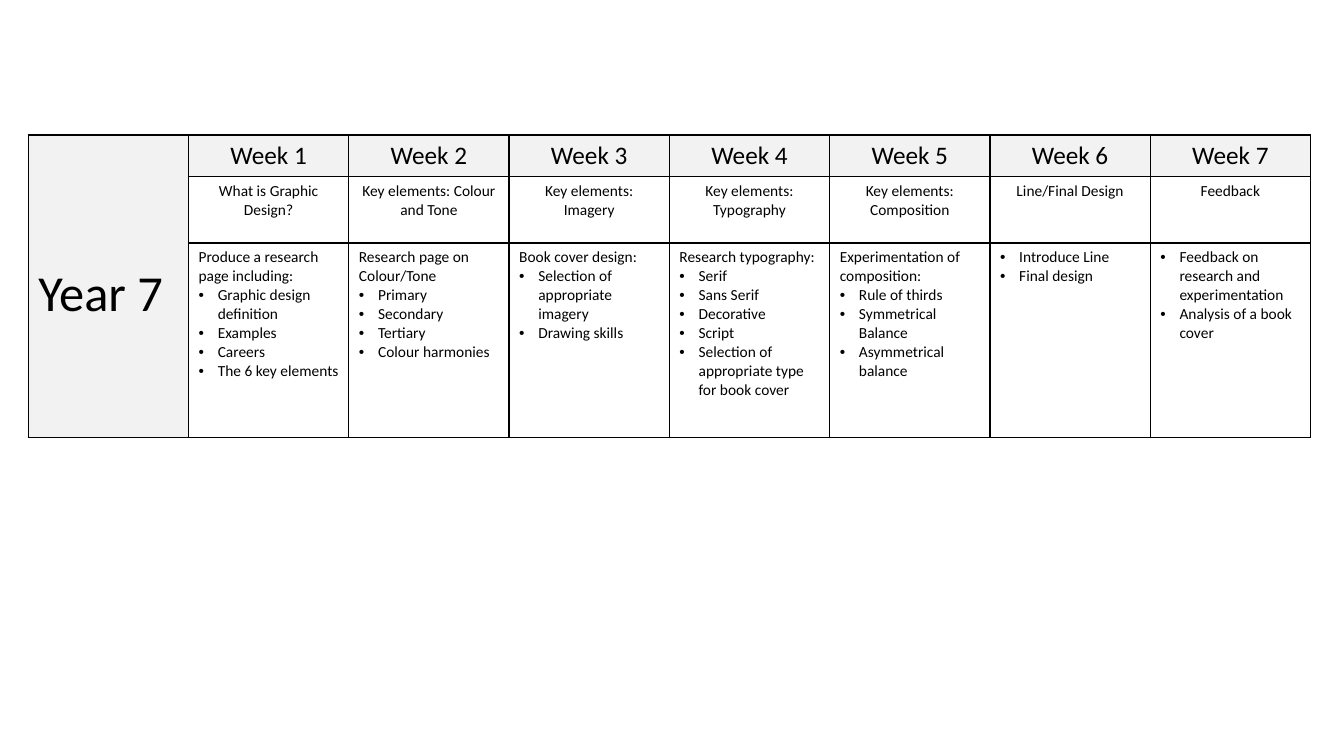
from lxml import etree
from pptx import Presentation
from pptx.dml.color import RGBColor
from pptx.enum.text import MSO_ANCHOR, PP_ALIGN
from pptx.oxml.ns import qn
from pptx.util import Inches, Pt

CENTER, LEFT = PP_ALIGN.CENTER, PP_ALIGN.LEFT
MIDDLE = MSO_ANCHOR.MIDDLE
COLORS = {"text": "000000", "border": "000000", "heading": "F2F2F2", "body": "FFFFFF"}
FONT = "Calibri"
ROW_HEIGHTS = [0.41, 0.66, 1.93]
WEEKS = [
    ("What is Graphic Design?", "Produce a research page including:",
     ["Graphic design definition", "Examples", "Careers", "The 6 key elements"]),
    ("Key elements: Colour and Tone", "Research page on Colour/Tone",
     ["Primary", "Secondary", "Tertiary", "Colour harmonies"]),
    ("Key elements: Imagery", "Book cover design:",
     ["Selection of appropriate imagery", "Drawing skills"]),
    ("Key elements: Typography", "Research typography:",
     ["Serif", "Sans Serif", "Decorative", "Script",
      "Selection of appropriate type for book cover"]),
    ("Key elements: Composition", "Experimentation of composition:",
     ["Rule of thirds", "Symmetrical Balance", "Asymmetrical balance"]),
    ("Line/Final Design", None, ["Introduce Line", "Final design"]),
    ("Feedback", None,
     ["Feedback on research and experimentation", "Analysis of a book cover"]),
]


def write(p, text, size=11, align=LEFT, bullet=False):
    """Put formatted text in a paragraph, with an optional hanging bullet."""
    p.alignment = align
    r = p.add_run()
    r.text = text
    r.font.name, r.font.size = FONT, Pt(size)
    r.font.color.rgb = RGBColor.from_string(COLORS["text"])
    if bullet:
        pPr = p._p.get_or_add_pPr()
        pPr.set("marL", str(Inches(0.19)))
        pPr.set("indent", str(-Inches(0.19)))
        etree.SubElement(pPr, qn("a:buFont")).set("typeface", "Arial")
        etree.SubElement(pPr, qn("a:buChar")).set("char", "•")


def style_cell(cell, color):
    """Give a cell thin borders and a plain fill."""
    tcPr = cell._tc.get_or_add_tcPr()
    for side in ("lnL", "lnR", "lnT", "lnB"):
        ln = etree.SubElement(tcPr, qn(f"a:{side}"), w=str(Pt(1)))
        fill = etree.SubElement(ln, qn("a:solidFill"))
        etree.SubElement(fill, qn("a:srgbClr")).set("val", COLORS["border"])
    cell.fill.solid()
    cell.fill.fore_color.rgb = RGBColor.from_string(color)


def fill_tasks(cell, intro, tasks):
    """Write an optional opening line followed by bulleted tasks."""
    lines = ([(intro, False)] if intro else []) + [(task, True) for task in tasks]
    tf = cell.text_frame
    for i, (text, bullet) in enumerate(lines):
        p = tf.add_paragraph() if i else tf.paragraphs[0]
        write(p, text, bullet=bullet)


def add_plan(s, left, top, width, year, weeks):
    """Draw the weekly plan of one year as a table."""
    count = len(weeks) + 1
    table = s.shapes.add_table(len(ROW_HEIGHTS), count, Inches(left), Inches(top),
                               Inches(width), Inches(sum(ROW_HEIGHTS))).table
    table.first_row = table.horz_banding = False
    for column in table.columns:
        column.width = Inches(width / count)
    for i, height in enumerate(ROW_HEIGHTS):
        table.rows[i].height = Inches(height)
        for j in range(count):
            heading = i == 0 or j == 0
            style_cell(table.cell(i, j), COLORS["heading" if heading else "body"])

    label = table.cell(0, 0)
    label.merge(table.cell(len(ROW_HEIGHTS) - 1, 0))
    label.vertical_anchor = MIDDLE
    label.margin_top = Inches(0.21)
    write(label.text_frame.paragraphs[0], year, size=36)

    for j, (topic, intro, tasks) in enumerate(weeks, 1):
        write(table.cell(0, j).text_frame.paragraphs[0], f"Week {j}", size=18, align=CENTER)
        write(table.cell(1, j).text_frame.paragraphs[0], topic, align=CENTER)
        fill_tasks(table.cell(2, j), intro, tasks)


def main():
    """Build and save the slide."""
    prs = Presentation()
    prs.slide_width, prs.slide_height = Inches(13.33), Inches(7.5)
    s = prs.slides.add_slide(prs.slide_layouts[6])
    add_plan(s, 0.28, 1.34, 12.72, "Year 7", WEEKS)
    prs.save("out.pptx")


if __name__ == "__main__":
    main()
